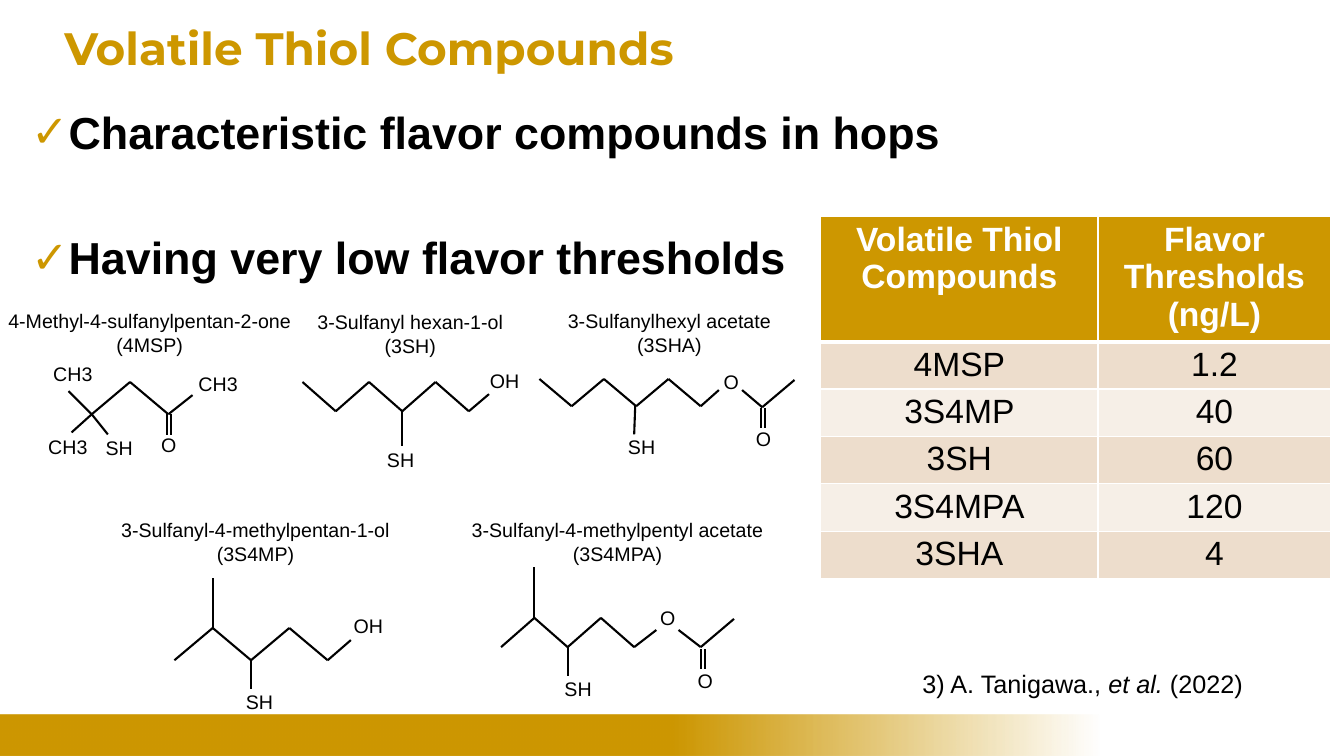
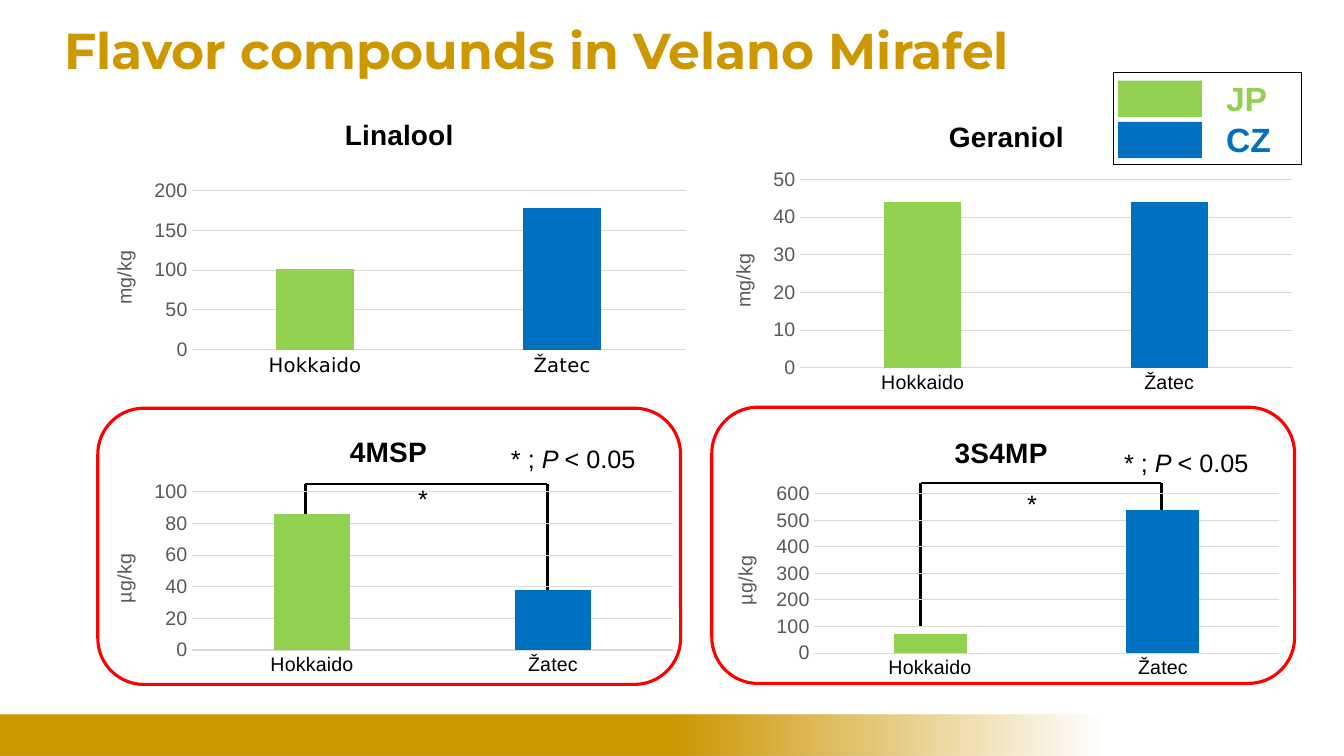
from dataclasses import dataclass
from itertools import pairwise

from lxml.etree import SubElement
from pptx import Presentation
from pptx.chart.data import CategoryChartData
from pptx.dml.color import RGBColor
from pptx.enum.chart import XL_CHART_TYPE, XL_TICK_MARK
from pptx.enum.shapes import MSO_CONNECTOR, MSO_SHAPE
from pptx.enum.text import PP_ALIGN
from pptx.oxml import parse_xml
from pptx.oxml.ns import nsdecls, qn
from pptx.util import Inches, Pt


@dataclass(frozen=True)
class Theme:
    gold: str = "CD9700"
    black: str = "000000"
    white: str = "FFFFFF"
    grey: str = "595959"
    grid: str = "D9D9D9"
    red: str = "FF0000"
    green: str = "92D050"
    blue: str = "0070C0"
    stripes: tuple = ("EDDDCC", "F6EFE7")
    heading: str = "Montserrat"
    body: str = "Arial"
    fallback: str = "DejaVu Sans"
    point: int = 32
    large: int = 24
    chart_title: int = 20
    note: int = 18
    label: int = 14


THEME = Theme()

# Content: thiol slide (positions in inches)
POINTS = ["Characteristic flavor compounds in hops", "Having very low flavor thresholds"]
THRESHOLDS = [
    ("Volatile Thiol Compounds", "Flavor Thresholds\n(ng/L)"),
    ("4MSP", "1.2"),
    ("3S4MP", "40"),
    ("3SH", "60"),
    ("3S4MPA", "120"),
    ("3SHA", "4"),
]
CITATION = [("3) A. Tanigawa., ", False), ("et al. ", True), ("(2022)", False)]

# zigzag: left, step, first height, second height, number of corners
# double: left of the two strokes, top, bottom
MOLECULES = [
    dict(name="4-Methyl-4-sulfanylpentan-2-one (4MSP)", name_box=(-0.21, 3.02, 3.39, 0.76),
         zigzag=(0.91, 0.38, 4.11, 3.79, 3),
         branches=[[(0.91, 4.11), (0.68, 3.88)], [(1.67, 4.11), (1.91, 3.92)],
                   [(1.07, 4.31), (0.91, 4.11), (0.71, 4.29)]],
         double=(1.66, 4.11, 4.32),
         atoms=[("SH", 0.95, 4.28), ("O", 1.5, 4.25), ("CH3", 0.43, 3.54),
                ("CH3", 0.38, 4.27), ("CH3", 1.87, 3.64)]),
    dict(name="3-Sulfanyl hexan-1-ol\n(3SH)", name_box=(2.63, 3.03, 2.88, 0.68),
         zigzag=(3, 0.33, 3.79, 4.08, 6),
         branches=[[(4.65, 4.08), (4.85, 3.91)], [(3.99, 4.08), (3.99, 4.42)]],
         atoms=[("SH", 3.74, 4.39), ("OH", 4.76, 3.61)]),
    dict(name="3-Sulfanylhexyl acetate (3SHA)", name_box=(5.22, 3.02, 2.84, 0.42),
         zigzag=(5.35, 0.32, 3.76, 4.03, 6),
         branches=[[(6.95, 4.03), (7.13, 3.87)], [(6.3, 4.03), (6.29, 4.31)],
                   [(7.36, 3.87), (7.56, 4.04), (7.88, 3.77)]],
         double=(7.55, 4.05, 4.25),
         atoms=[("SH", 6.13, 4.27), ("O", 7.08, 3.62), ("O", 7.4, 4.19)]),
    dict(name="3-Sulfanyl-4-methylpentan-1-ol (3S4MP)", name_box=(0.82, 5.09, 3.43, 0.41),
         zigzag=(1.73, 0.38, 6.55, 6.23, 5),
         branches=[[(3.25, 6.55), (3.48, 6.35)], [(2.11, 6.23), (2.11, 5.73)],
                   [(2.49, 6.55), (2.49, 6.84)]],
         atoms=[("SH", 2.34, 6.8), ("OH", 3.41, 6.04)]),
    dict(name="3-Sulfanyl-4-methylpentyl acetate (3S4MPA)", name_box=(4.45, 5.09, 3.35, 0.56),
         zigzag=(4.97, 0.33, 6.42, 6.13, 5),
         branches=[[(6.29, 6.42), (6.51, 6.25)], [(5.3, 6.13), (5.3, 5.63)],
                   [(5.63, 6.42), (5.63, 6.71)], [(6.73, 6.25), (6.95, 6.42), (7.28, 6.14)]],
         double=(6.95, 6.44, 6.64),
         atoms=[("SH", 5.5, 6.67), ("O", 6.45, 5.96), ("O", 6.82, 6.59)]),
]

# Content: chart slide (boxes and places are on the page, in inches)
PLACES = ["Hokkaido", "Žatec"]
CHARTS = [
    dict(title="Linalool", unit="mg/kg", values=(101, 178), top=200, step=50,
         box=(1.02, 1, 5.9, 3.19), plot=(1.9, 1.89, 4.9, 1.58),
         title_at=(3.37, 1.11), unit_at=(1.07, 2.45), font=THEME.fallback),
    dict(title="Geraniol", unit="mg/kg", values=(44, 44), top=50, step=10,
         box=(7.03, 1.02, 5.9, 2.95), plot=(7.93, 1.78, 4.89, 1.87),
         title_at=(9.36, 1.13), unit_at=(7.21, 2.48), font=THEME.body),
    dict(title="3S4MP", unit="µg/kg", values=(70, 540), top=600, step=100,
         box=(7.06, 4.16, 5.74, 2.62), plot=(8.07, 4.9, 4.62, 1.58),
         title_at=(9.42, 4.27), unit_at=(7.23, 5.48), font=THEME.body),
    dict(title="4MSP", unit="µg/kg", values=(86, 38), top=100, step=20,
         box=(0.9, 4.14, 5.9, 2.62), plot=(1.9, 4.88, 4.78, 1.57),
         title_at=(3.42, 4.25), unit_at=(1.07, 5.46), font=THEME.body),
]
# bracket: left, right, top, bottom
COMPARISONS = [
    dict(frame=(0.97, 4.05, 5.78, 2.74), bracket=(3.03, 5.43, 4.8, 5.98),
         star=(4.05, 4.75), note=(4.97, 4.35)),
    dict(frame=(7.06, 4.04, 5.78, 2.74), bracket=(9.13, 11.52, 4.79, 6.22),
         star=(10.09, 4.8), note=(11.05, 4.39)),
]
SIGNIFICANCE = [("* ; ", False), ("P ", True), ("< 0.05", False)]
LEGEND = [("JP", THEME.green), ("CZ", THEME.blue)]


# Text and shape helpers
def rgb(color):
    return RGBColor.from_string(color)


def inches(values):
    return [Inches(value) for value in values]


def write(para, runs, size, color=THEME.black, **formats):
    """Fill a paragraph with a string or with (text, italic) pairs."""
    for text, italic in [(runs, False)] if isinstance(runs, str) else runs:
        span = para.add_run()
        span.text = text
        settings = dict(size=Pt(size), name=THEME.body, bold=False, italic=italic) | formats
        for name, value in settings.items():
            setattr(span.font, name, value)
        span.font.color.rgb = rgb(color)


def write_lines(frame, text, size, align=PP_ALIGN.LEFT, **formats):
    for index, line in enumerate(text.split("\n")):
        para = frame.add_paragraph() if index else frame.paragraphs[0]
        para.alignment = align
        write(para, line, size, **formats)


def add_box(shapes, place):
    frame = shapes.add_textbox(*inches(place)).text_frame
    frame.word_wrap = True
    return frame


def add_shape(shapes, kind, place, fill=None, line=None, width=0.75):
    shape = shapes.add_shape(kind, *inches(place))
    shape.shadow.inherit = False
    for part, color in ((shape.fill, fill), (shape.line.fill, line)):
        if color:
            part.solid()
            part.fore_color.rgb = rgb(color)
        else:
            part.background()
    if line:
        shape.line.width = Pt(width)
    return shape


def draw_chain(shapes, corners):
    for start, end in pairwise(corners):
        line = shapes.add_connector(MSO_CONNECTOR.STRAIGHT, *inches(start + end))
        line.line.width = Pt(1.5)
        line.line.color.rgb = rgb(THEME.black)
        SubElement(line._element.spPr, qn("a:effectLst"))


def add_page(deck, title, size):
    page = deck.slides.add_slide(deck.slide_layouts[6])
    band = add_shape(page.shapes, MSO_SHAPE.RECTANGLE, (0, 7.09, 10.9, 0.41))
    band.fill.gradient()
    band.fill.gradient_angle = 0
    for stop, position in zip(band.fill.gradient_stops, (0.61, 1)):
        stop.position = position
        stop.color.rgb = rgb(THEME.gold)
    last_color = list(band._element.iter(qn("a:srgbClr")))[-1]
    SubElement(last_color, qn("a:alpha"), val="0")
    para = add_box(page.shapes, (0.54, 0.21, 12.25, 0.7)).paragraphs[0]
    para.line_spacing = 0.9
    write(para, title, size, THEME.gold, name=THEME.heading, bold=True)
    return page


# Thiol slide parts
def add_points(page):
    frame = add_box(page.shapes, (0.21, 1.05, 12.95, 2))
    for index, text in enumerate(POINTS):
        para = frame.add_paragraph() if index else frame.paragraphs[0]
        properties = para._p.get_or_add_pPr()
        properties.set("marL", str(Inches(0.25)))
        properties.set("indent", str(-Inches(0.25)))
        SubElement(SubElement(properties, qn("a:buClr")), qn("a:srgbClr"), val=THEME.gold)
        SubElement(properties, qn("a:buFont"), typeface=THEME.fallback)
        SubElement(properties, qn("a:buChar"), char="✓")
        para.line_spacing = 0.9
        if index:
            para.space_before = Pt(55)
        write(para, text, THEME.point, bold=True)


def add_border(cell, side, width):
    line = SubElement(cell._tc.get_or_add_tcPr(), qn(f"a:ln{side}"), w=str(Pt(width)))
    SubElement(SubElement(line, qn("a:solidFill")), qn("a:srgbClr"), val=THEME.white)


def add_thresholds(page):
    table = page.shapes.add_table(len(THRESHOLDS), 2, *inches((8.14, 2.15, 5.06, 3.55))).table
    for column, width in zip(table.columns, (2.75, 2.31)):
        column.width = Inches(width)
    for index, texts in enumerate(THRESHOLDS):
        header = index == 0
        table.rows[index].height = Inches(1.2 if header else 0.47)
        for cell, text in zip(table.rows[index].cells, texts):
            for side in "LRTB":
                thick = (header and side == "B") or (index == 1 and side == "T")
                add_border(cell, side, 3 if thick else 1)
            cell.margin_top, cell.margin_bottom = inches((0.04, 0 if header else 0.02))
            cell.fill.solid()
            cell.fill.fore_color.rgb = rgb(THEME.gold if header else THEME.stripes[(index - 1) % 2])
            write_lines(cell.text_frame, text, THEME.large, PP_ALIGN.CENTER, bold=header,
                        color=THEME.white if header else THEME.black)


def add_molecule(page, molecule):
    write_lines(add_box(page.shapes, molecule["name_box"]), molecule["name"],
                THEME.label, PP_ALIGN.CENTER)
    group = page.shapes.add_group_shape().shapes
    left, step, *heights, count = molecule["zigzag"]
    draw_chain(group, [(left + step * i, heights[i % 2]) for i in range(count)])
    for branch in molecule["branches"]:
        draw_chain(group, branch)
    if "double" in molecule:
        left, top, bottom = molecule["double"]
        for x in (left, left + 0.04):
            draw_chain(group, [(x, top), (x, bottom)])
    for atom, left, top in molecule["atoms"]:
        write_lines(add_box(group, (left, top, 0.77, 0.34)), atom, THEME.label)


# Chart slide parts
def set_layout(parent, box, place):
    """Pin a title (left, top) or the plot (left, top, width, height) in its chart."""
    for old in parent.findall(qn("c:layout")):
        parent.remove(old)
    layout = parse_xml(f"<c:layout {nsdecls('c')}><c:manualLayout/></c:layout>")
    parent.insert(1 if parent.find(qn("c:tx")) is not None else 0, layout)
    if len(place) == 4:
        SubElement(layout[0], qn("c:layoutTarget"), val="inner")
    for name in ("xMode", "yMode"):
        SubElement(layout[0], qn(f"c:{name}"), val="edge")
    origin = (box[0], box[1], 0, 0)
    for name, value, start, full in zip("xywh", place, origin, box[2:] * 2):
        SubElement(layout[0], qn(f"c:{name}"), val=f"{(value - start) / full:.4f}")


def add_column_chart(page, content):
    data = CategoryChartData()
    data.categories = PLACES
    data.add_series("Series 1", content["values"])
    box = content["box"]
    chart = page.shapes.add_chart(XL_CHART_TYPE.COLUMN_CLUSTERED, *inches(box), data).chart
    chart.has_legend = False
    chart.font.size, chart.font.name = Pt(10), THEME.fallback
    chart.font.color.rgb = rgb(THEME.black)
    chart.has_title = True
    write(chart.chart_title.text_frame.paragraphs[0], content["title"], THEME.chart_title, bold=True)

    values, places = chart.value_axis, chart.category_axis
    for name, value in dict(minimum_scale=0, maximum_scale=content["top"],
                            major_unit=content["step"], has_title=True).items():
        setattr(values, name, value)
    for axis, color, font in ((values, THEME.grey, THEME.body), (places, THEME.black, content["font"])):
        axis.major_tick_mark = XL_TICK_MARK.NONE
        axis.tick_labels.font.size, axis.tick_labels.font.name = Pt(THEME.label), font
        axis.tick_labels.font.color.rgb = rgb(color)
    values.format.line.fill.background()
    for line in (values.major_gridlines.format.line, places.format.line):
        line.color.rgb = rgb(THEME.grid)
        line.width = Pt(0.75)
    unit_frame = values.axis_title.text_frame
    unit_frame._txBody.bodyPr.set("rot", "-5400000")
    write(unit_frame.paragraphs[0], content["unit"], THEME.label, THEME.grey)

    plot = chart.plots[0]
    plot.gap_width, plot.overlap, plot.vary_by_categories = 219, -27, False
    for index, (_, color) in enumerate(LEGEND):
        fill = plot.series[0].points[index].format.fill
        fill.solid()
        fill.fore_color.rgb = rgb(color)

    # Transparent background and pinned parts
    space = chart._chartSpace
    area = space.find(".//" + qn("c:plotArea"))
    clear = f"<c:spPr {nsdecls('c', 'a')}><a:noFill/><a:ln><a:noFill/></a:ln></c:spPr>"
    area.append(parse_xml(clear))
    space.find(qn("c:chart")).addnext(parse_xml(clear))
    title, unit = space.iter(qn("c:title"))
    for part, key in ((area, "plot"), (title, "title_at"), (unit, "unit_at")):
        set_layout(part, box, content[key])


def add_legend(page):
    group = page.shapes.add_group_shape().shapes
    frame = add_shape(group, MSO_SHAPE.RECTANGLE, (11.04, 0.72, 1.87, 0.91), line=THEME.black).text_frame
    frame.margin_left = Inches(1.12)
    for index, (text, color) in enumerate(LEGEND):
        para = frame.add_paragraph() if index else frame.paragraphs[0]
        para.alignment = PP_ALIGN.LEFT
        write(para, text, THEME.large, color, bold=True)
        add_shape(group, MSO_SHAPE.RECTANGLE, (11.09, 0.8 + 0.41 * index, 0.83, 0.36), fill=color)


def main():
    deck = Presentation()
    deck.slide_width, deck.slide_height = inches((13.33, 7.5))

    page = add_page(deck, "Volatile Thiol Compounds", 32.4)
    add_points(page)
    add_thresholds(page)
    write(add_box(page.shapes, (9.05, 6.58, 4.28, 0.4)).paragraphs[0], CITATION, THEME.note)
    for molecule in MOLECULES:
        add_molecule(page, molecule)

    page = add_page(deck, "Flavor compounds in Velano Mirafel", 36)
    for comparison in COMPARISONS:
        add_shape(page.shapes, MSO_SHAPE.ROUNDED_RECTANGLE, comparison["frame"], line=THEME.red, width=2.25)
        left, right, top, bottom = comparison["bracket"]
        draw_chain(page.shapes.add_group_shape().shapes,
                   [(left, bottom), (left, top), (right, top), (right, bottom)])
    for content in CHARTS:
        add_column_chart(page, content)
    for comparison in COMPARISONS:
        for key, width, runs in (("star", 0.56, "*"), ("note", 1.97, SIGNIFICANCE)):
            frame = add_box(page.shapes, comparison[key] + (width, 0.4))
            write(frame.paragraphs[0], runs, THEME.note)
    add_legend(page)
    deck.save("out.pptx")


if __name__ == "__main__":
    main()
